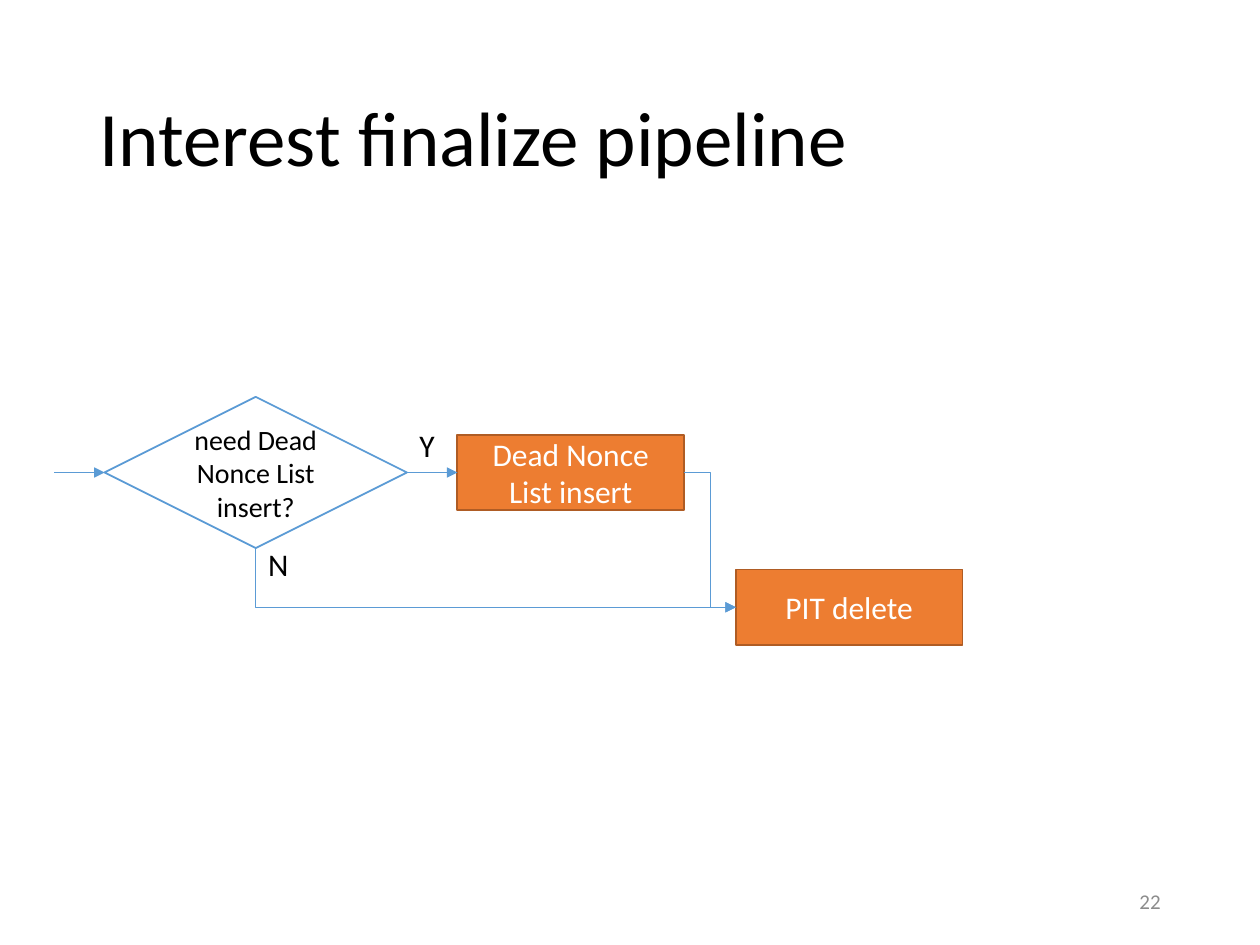
import pptx
import pptx.util
import pptx.dml.color
import pptx.enum.shapes
import pptx.enum.text
import pptx.oxml
import pptx.oxml.ns

Inches = pptx.util.Inches
Pt = pptx.util.Pt
RGBColor = pptx.dml.color.RGBColor
MSO_SHAPE = pptx.enum.shapes.MSO_SHAPE
MSO_CONNECTOR = pptx.enum.shapes.MSO_CONNECTOR
MSO_ANCHOR = pptx.enum.text.MSO_ANCHOR
PP_ALIGN = pptx.enum.text.PP_ALIGN
qn = pptx.oxml.ns.qn

FONT = "Calibri"
BLACK = RGBColor(0x00, 0x00, 0x00)
WHITE = RGBColor(0xFF, 0xFF, 0xFF)
GRAY = RGBColor(0x8C, 0x8C, 0x8C)
BLUE = RGBColor(0x5B, 0x9B, 0xD5)
ORANGE = RGBColor(0xED, 0x7D, 0x31)
BROWN = RGBColor(0xAF, 0x5C, 0x24)

ROW_Y = 3.75
DELETE_Y = 4.82
DECISION_X, DECISION_W, DECISION_H = 0.83, 2.4, 1.2
ACTION_W, ACTION_H = 1.8, 0.6
GAP = 0.4
INSERT_X = DECISION_X + DECISION_W + GAP
DELETE_X = 5.84


def write_text(tf, text, size=18, color=BLACK, align=PP_ALIGN.LEFT,
               anchor=MSO_ANCHOR.MIDDLE, wrap=True, spacing=None):
    tf.word_wrap = wrap
    tf.vertical_anchor = anchor
    p = tf.paragraphs[0]
    p.alignment = align
    if spacing:
        p.line_spacing = spacing
    r = p.add_run()
    r.text = text
    r.font.name = FONT
    r.font.size = Pt(size)
    r.font.color.rgb = color


def add_label(s, x, y, w, h, text, **fmt):
    sp = s.shapes.add_textbox(Inches(x), Inches(y), Inches(w), Inches(h))
    write_text(sp.text_frame, text, **fmt)


def add_node(s, kind, x, center_y, w, h, text, fill, line, **fmt):
    sp = s.shapes.add_shape(kind, Inches(x), Inches(center_y - h / 2),
                            Inches(w), Inches(h))
    sp.shadow.inherit = False
    sp.fill.solid()
    sp.fill.fore_color.rgb = fill
    sp.line.color.rgb = line
    sp.line.width = Pt(1)
    write_text(sp.text_frame, text, align=PP_ALIGN.CENTER, **fmt)


def add_action(s, x, center_y, text):
    add_node(s, MSO_SHAPE.RECTANGLE, x, center_y, ACTION_W, ACTION_H, text,
             ORANGE, BROWN, color=WHITE)


def add_arrow(s, x1, y1, x2, y2, kind=MSO_CONNECTOR.STRAIGHT):
    c = s.shapes.add_connector(kind, Inches(x1), Inches(y1),
                               Inches(x2), Inches(y2))
    c.line.color.rgb = BLUE
    c.line.width = Pt(0.5)
    ln = c.line._get_or_add_ln()
    ln.append(pptx.oxml.parse_xml(
        f'<a:tailEnd {pptx.oxml.ns.nsdecls("a")} type="triangle"/>'))
    c._element.spPr.append(pptx.oxml.parse_xml(
        f'<a:effectLst {pptx.oxml.ns.nsdecls("a")}/>'))
    return c


def add_down_right_arrow(s, x1, y1, x2, y2):
    mid_x, mid_y = (x1 + x2) / 2, (y1 + y2) / 2
    half_w, half_h = (y2 - y1) / 2, (x2 - x1) / 2
    c = add_arrow(s, mid_x + half_w, mid_y - half_h,
                  mid_x - half_w, mid_y + half_h, MSO_CONNECTOR.ELBOW)
    spPr = c._element.spPr
    spPr.find(qn("a:xfrm")).set("rot", str(270 * 60000))
    spPr.find(qn("a:prstGeom")).set("prst", "bentConnector2")


def main():
    prs = pptx.Presentation()
    prs.slide_width, prs.slide_height = Inches(10), Inches(7.5)
    s = prs.slides.add_slide(prs.slide_layouts[6])

    add_label(s, 0.69, 0.4, 8.62, 1.45, "Interest finalize pipeline",
              size=44, spacing=0.9)
    add_label(s, 7.06, 6.95, 2.25, 0.4, "22", size=12, color=GRAY,
              align=PP_ALIGN.RIGHT)

    add_action(s, DELETE_X, DELETE_Y, "PIT delete")
    add_action(s, INSERT_X, ROW_Y, "Dead Nonce List insert")
    add_node(s, MSO_SHAPE.FLOWCHART_DECISION, DECISION_X, ROW_Y,
             DECISION_W, DECISION_H, "need Dead Nonce List insert?",
             WHITE, BLUE, size=16)

    for x in (DECISION_X, INSERT_X):
        add_arrow(s, x - GAP, ROW_Y, x, ROW_Y)
    add_arrow(s, INSERT_X + ACTION_W, ROW_Y, DELETE_X, DELETE_Y,
              MSO_CONNECTOR.ELBOW)
    add_down_right_arrow(s, DECISION_X + DECISION_W / 2,
                         ROW_Y + DECISION_H / 2, DELETE_X, DELETE_Y)

    for x, y, w, text in ((3.23, 3.33, 0.32, "Y"), (2.03, 4.28, 0.36, "N")):
        add_label(s, x, y, w, 0.4, text, anchor=MSO_ANCHOR.TOP, wrap=False)

    prs.save("out.pptx")


if __name__ == "__main__":
    main()
